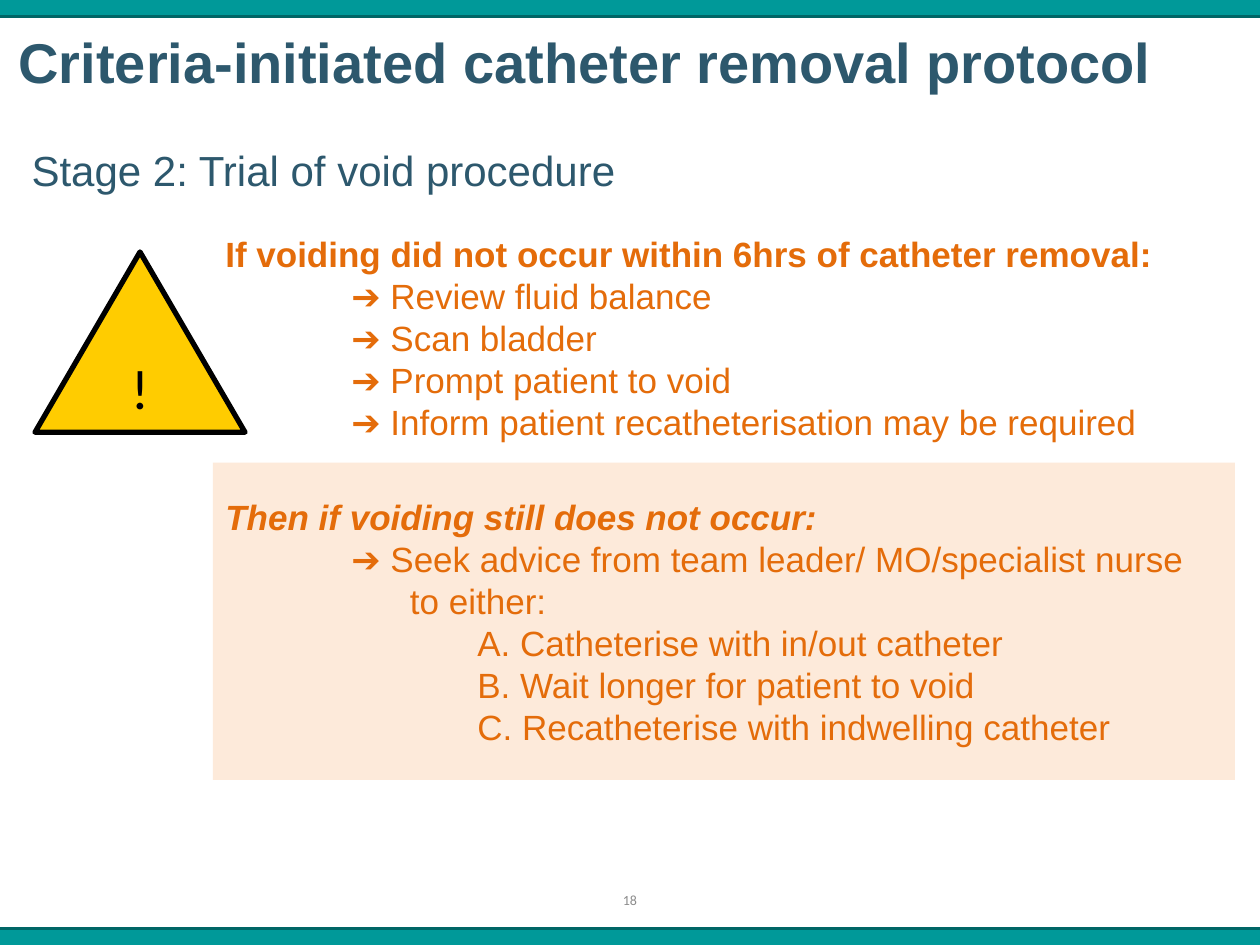
from lxml import etree
from pptx import Presentation
from pptx import util as u
from pptx.dml.color import RGBColor
from pptx.enum import shapes, text
from pptx.oxml.ns import qn

WIDTH, HEIGHT = 720, 540
BAND = 9.36
TEAL, DARK_TEAL, SLATE, ORANGE = "009999", "006666", "2D586D", "E46C0A"
YELLOW, PEACH, BLACK, GREY = "FFCC00", "FDEADA", "000000", "8C8C8C"
ARROW, CONTINUED, OPTION = 72, 105.5, 144  # left indents

# Each line: text, left indent, bold, italic
TITLE = [("Criteria-initiated catheter removal protocol", 0, True, False)]
STAGE = [("Stage 2: Trial of void procedure", 0, False, False)]
NO_VOID = [
    ("If voiding did not occur within 6hrs of catheter removal:", 0, True, False),
    ("➔ Review fluid balance", ARROW, False, False),
    ("➔ Scan bladder", ARROW, False, False),
    ("➔ Prompt patient to void", ARROW, False, False),
    ("➔ Inform patient recatheterisation may be required", ARROW, False, False),
]
STILL_NO_VOID = [
    ("Then if voiding still does not occur:", 0, True, True),
    ("➔ Seek advice from team leader/ MO/specialist nurse", ARROW, False, False),
    ("to either:", CONTINUED, False, False),
    ("A. Catheterise with in/out catheter", OPTION, False, False),
    ("B. Wait longer for patient to void", OPTION, False, False),
    ("C. Recatheterise with indwelling catheter", OPTION, False, False),
]
WARNING = [("!", 0, False, False)]
PAGE_NUMBER = [("18", 0, False, False)]


def color(hex_string):
    return RGBColor.from_string(hex_string)


def points(box):
    return [u.Pt(value) for value in box]


def add_block(slide, kind, box, fill, line=None, line_width=0):
    shape = slide.shapes.add_shape(kind, *points(box))
    shape.shadow.inherit = False
    shape.fill.solid()
    shape.fill.fore_color.rgb = color(fill)
    if line:
        shape.line.color.rgb = color(line)
        shape.line.width = u.Pt(line_width)
    else:
        shape.line.fill.background()
    return shape


def add_rule(slide, y):
    rule = slide.shapes.add_connector(
        shapes.MSO_CONNECTOR.STRAIGHT, *points((0, y, WIDTH, y)))
    rule.line.color.rgb = color(DARK_TEAL)
    rule.line.width = u.Pt(2)
    etree.SubElement(rule._element.spPr, qn("a:effectLst"))


def write(shape, lines, size, font_color, font="Arial", centred=False):
    frame = shape.text_frame
    frame.word_wrap = True
    frame.vertical_anchor = text.MSO_ANCHOR.MIDDLE
    for index, (words, indent, bold, italic) in enumerate(lines):
        paragraph = frame.add_paragraph() if index else frame.paragraphs[0]
        paragraph.alignment = text.PP_ALIGN.CENTER if centred else text.PP_ALIGN.LEFT
        if indent:
            paragraph._p.get_or_add_pPr().set("marL", str(u.Pt(indent)))
        run = paragraph.add_run()
        run.text = words
        run.font.name = font
        run.font.size = u.Pt(size)
        run.font.bold = bold
        run.font.italic = italic
        run.font.color.rgb = color(font_color)


def add_text(slide, box, *style, **options):
    write(slide.shapes.add_textbox(*points(box)), *style, **options)


def main():
    presentation = Presentation()
    presentation.slide_width, presentation.slide_height = points((WIDTH, HEIGHT))
    slide = presentation.slides.add_slide(presentation.slide_layouts[6])
    kinds = shapes.MSO_SHAPE

    for top in (0, HEIGHT - BAND):
        add_block(slide, kinds.RECTANGLE, (0, top, WIDTH, BAND), TEAL)
    for y in (HEIGHT - BAND, BAND):
        add_rule(slide, y)

    add_text(slide, (276, 500, 168, 28.75), PAGE_NUMBER, 8, GREY,
             font="Calibri", centred=True)
    add_text(slide, (11, 71.5, 703, 51), STAGE, 24, SLATE)
    add_text(slide, (121.7, 144, 692, 98), NO_VOID, 20, ORANGE)

    triangle = add_block(slide, kinds.ISOSCELES_TRIANGLE,
                         (20, 144, 120, 103), YELLOW, BLACK, 3)
    write(triangle, WARNING, 32, BLACK, font="Calibri", centred=True)

    panel = add_block(slide, kinds.RECTANGLE, (121.7, 264.4, 584, 181.3), PEACH)
    write(panel, STILL_NO_VOID, 20, ORANGE)

    add_text(slide, (3.5, BAND, 754, 51), TITLE, 32, SLATE)
    presentation.save("out.pptx")


if __name__ == "__main__":
    main()
